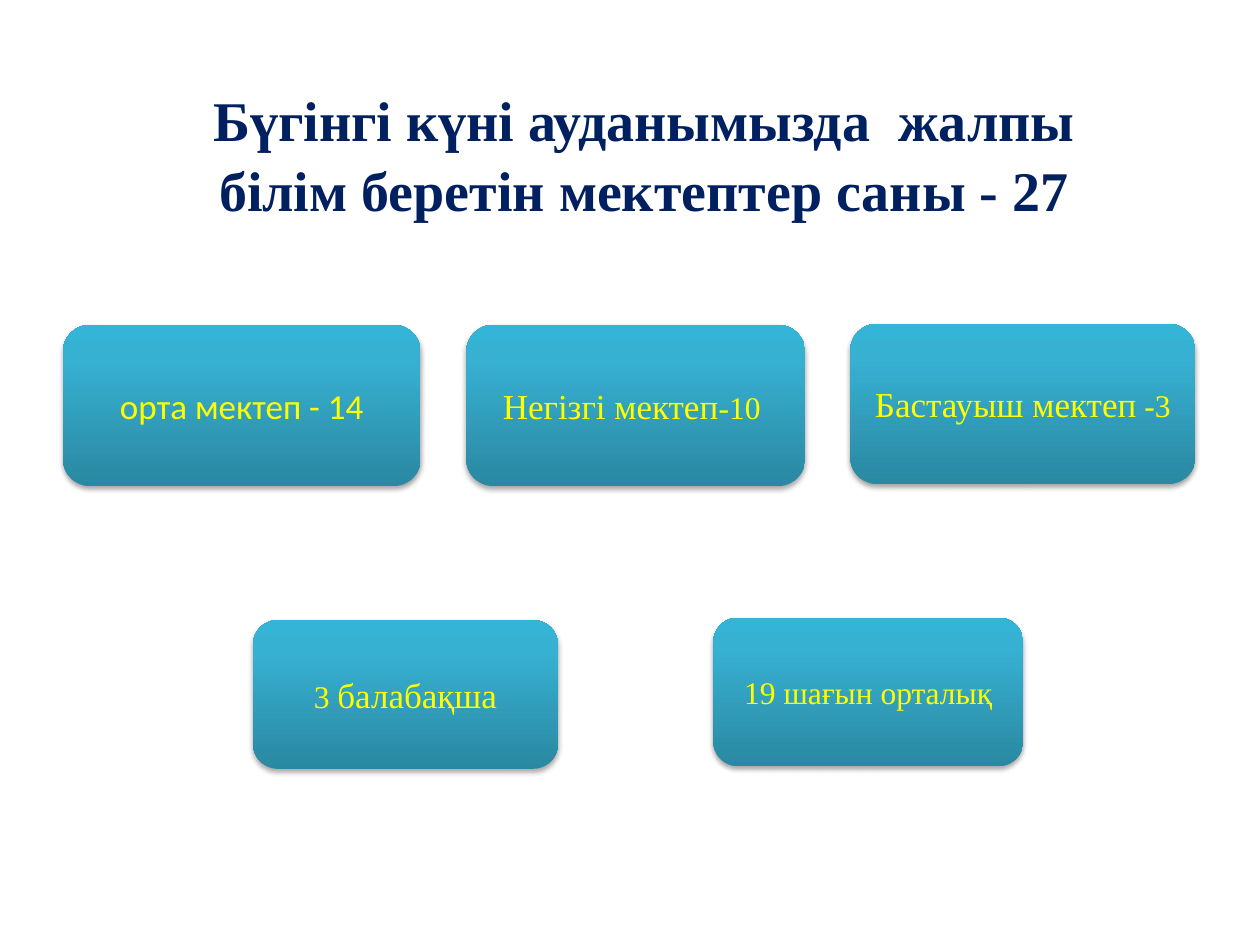
from dataclasses import dataclass

from lxml import etree
from pptx import Presentation
from pptx.dml.color import RGBColor
from pptx.enum.shapes import MSO_SHAPE
from pptx.enum.text import MSO_ANCHOR, MSO_AUTO_SIZE, PP_ALIGN
from pptx.oxml.ns import qn
from pptx.util import Cm, Pt

ROUNDED = MSO_SHAPE.ROUNDED_RECTANGLE
TOP, MIDDLE = MSO_ANCHOR.TOP, MSO_ANCHOR.MIDDLE
CENTER = PP_ALIGN.CENTER
NO_AUTOFIT = MSO_AUTO_SIZE.NONE
TITLE_ONLY = 5


@dataclass(frozen=True)
class Theme:
    heading: str = "002060"
    label: str = "FFFF00"
    gradient: tuple = ((0, "2A88A2"), (80, "37B1D2"), (100, "34B4D6"))
    shadow: str = "000000"
    serif: str = "Times New Roman"
    sans: str = "Calibri"
    heading_size: int = 32
    large: int = 20
    small: int = 18


THEME = Theme()
TITLE_BOX = (2.69, 1.52, 20.6, 3.81)
TITLE = "Бүгінгі күні ауданымызда  жалпы білім беретін мектептер саны - 27"
SCHOOL_CARDS = (
    ((1.27, 6.55, 7.21, 3.25), THEME.sans, (("орта мектеп - 14", THEME.large),)),
    ((9.4, 6.55, 6.83, 3.25), THEME.serif,
     (("Негізгі мектеп", THEME.large), ("-10 ", THEME.small))),
    ((17.14, 6.53, 6.96, 3.23), THEME.serif,
     (("Бастауыш мектеп", THEME.large), (" -3", THEME.small))),
)
PRESCHOOL_CARDS = (
    ((5.1, 12.5, 6.15, 3), THEME.serif,
     (("3 ", THEME.small), ("балабақша", THEME.large))),
    ((14.38, 12.45, 6.25, 3), THEME.serif,
     (("19 шағын орталық", THEME.small),)),
)


def set_attributes(target, values):
    for name, value in values.items():
        setattr(target, name, value)


def add_run(paragraph, text, color, **font_values):
    run = paragraph.add_run()
    run.text = text
    set_attributes(run.font, font_values)
    run.font.color.rgb = RGBColor.from_string(color)


def add_color(parent, color):
    return etree.SubElement(parent, qn("a:srgbClr"), val=color)


def set_gradient(shape, stops):
    shape.fill.gradient()
    shape.fill.gradient_angle = 90
    stop_list = next(shape.element.spPr.iter(qn("a:gsLst")))
    for stop in list(stop_list):
        stop_list.remove(stop)
    for percent, color in stops:
        stop = etree.SubElement(stop_list, qn("a:gs"), pos=str(percent * 1000))
        add_color(stop, color)


def set_shadow(shape):
    shape.shadow.inherit = False
    effects = shape.element.spPr.find(qn("a:effectLst"))
    shadow = etree.SubElement(
        effects, qn("a:outerShdw"), blurRad=str(Pt(3.1)), dist=str(Pt(1.8)),
        dir="5400000", rotWithShape="0")
    etree.SubElement(add_color(shadow, THEME.shadow), qn("a:alpha"), val="35000")


def place_title(slide, box):
    title = slide.shapes.title
    set_attributes(title, dict(zip(("left", "top", "width", "height"), map(Cm, box))))
    set_attributes(title.text_frame, {
        "word_wrap": True, "auto_size": NO_AUTOFIT, "vertical_anchor": TOP})
    paragraph = title.text_frame.paragraphs[0]
    set_attributes(paragraph, {"alignment": CENTER, "line_spacing": 1.05})
    add_run(paragraph, TITLE, THEME.heading, name=THEME.serif,
            size=Pt(THEME.heading_size), bold=True)


def add_card(slide, box, font_name, parts):
    card = slide.shapes.add_shape(ROUNDED, *map(Cm, box))
    set_gradient(card, THEME.gradient)
    card.line.fill.background()
    set_shadow(card)
    set_attributes(card.text_frame, {"word_wrap": True, "vertical_anchor": MIDDLE})
    paragraph = card.text_frame.paragraphs[0]
    paragraph.alignment = CENTER
    for text, size in parts:
        add_run(paragraph, text, THEME.label, name=font_name, size=Pt(size))


def main():
    presentation = Presentation()
    set_attributes(presentation, {"slide_width": Cm(25.4), "slide_height": Cm(19.05)})
    slide = presentation.slides.add_slide(presentation.slide_layouts[TITLE_ONLY])
    place_title(slide, TITLE_BOX)
    for box, font_name, parts in SCHOOL_CARDS + PRESCHOOL_CARDS:
        add_card(slide, box, font_name, parts)
    presentation.save("out.pptx")


if __name__ == "__main__":
    main()
